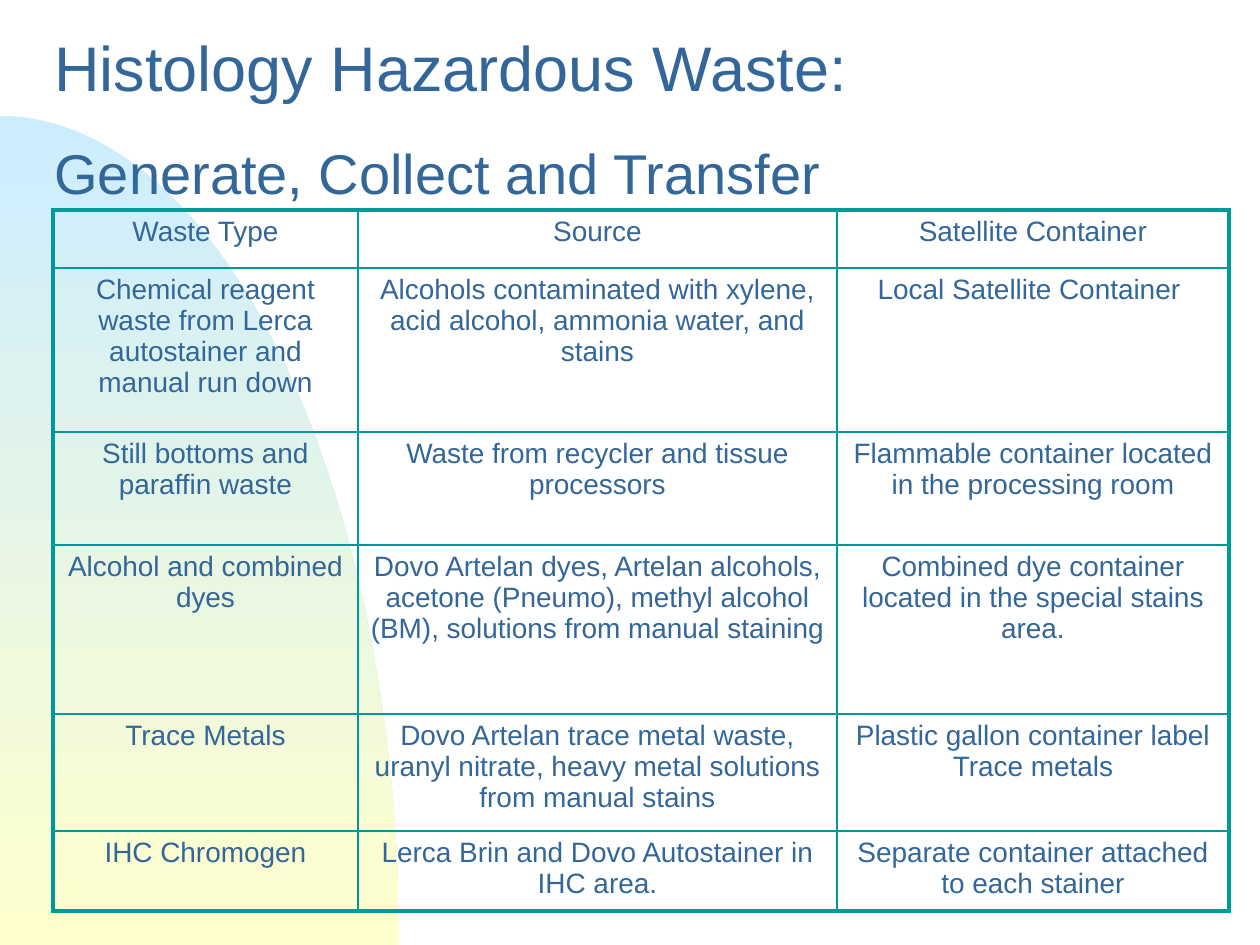
from dataclasses import dataclass
from math import cos, pi, sin

from lxml import etree
from pptx import Presentation
from pptx import util as u
from pptx.dml.color import RGBColor
from pptx.enum import text
from pptx.oxml.ns import qn

EMU_PER_PX = 914400 / 126
WIDTH, HEIGHT = 1260, 945
INK, RULE = "336699", "009999"
SKY, CREAM = "CCECFF", "FFFFCC"
OUTER, INNER = 2.25, 1
ARC_STEPS = 90


@dataclass
class Heading:
    words: str
    size: int
    space_before: float


@dataclass
class WasteRow:
    height: int
    cells: tuple[str, str, str]


HEADINGS = [
    Heading("Histology Hazardous Waste:", 36, 0),
    Heading("Generate, Collect and Transfer", 32, 31.5),
]
COLUMN_WIDTHS = [305, 479, 392]
WASTE_ROWS = [
    WasteRow(58, ("Waste Type", "Source", "Satellite Container")),
    WasteRow(164, (
        "Chemical reagent waste from Lerca autostainer and manual run down",
        "Alcohols contaminated with xylene, acid alcohol, ammonia water, and stains",
        "Local Satellite Container ")),
    WasteRow(113, (
        "Still bottoms and paraffin waste",
        "Waste from recycler and tissue processors",
        "Flammable container located in the processing room")),
    WasteRow(169, (
        "Alcohol and combined dyes",
        "Dovo Artelan dyes, Artelan alcohols, acetone (Pneumo), methyl alcohol "
        "(BM), solutions from manual staining",
        "Combined dye container located in the special stains area.")),
    WasteRow(117, (
        "Trace Metals",
        "Dovo Artelan trace metal waste, uranyl nitrate, heavy metal solutions "
        "from manual stains",
        "Plastic gallon container label Trace metals")),
    WasteRow(80, (
        "IHC Chromogen",
        "Lerca Brin and Dovo Autostainer in IHC area.",
        "Separate container attached to each stainer")),
]


def px(length: int) -> u.Emu:
    return u.Emu(round(length * EMU_PER_PX))


def color(code: str) -> RGBColor:
    return RGBColor.from_string(code)


def apply(target, values: dict) -> None:
    for name, value in values.items():
        setattr(target, name, value)


def write(paragraph, words: str, size: int) -> None:
    run = paragraph.add_run()
    run.text = words
    apply(run.font, {"name": "Arial", "size": u.Pt(size)})
    run.font.color.rgb = color(INK)


def draw_hill(slide, top: int, radius: int) -> None:
    rise = HEIGHT - top
    angles = [pi / 2 * step / ARC_STEPS for step in range(ARC_STEPS + 1)]
    arc = [(px(radius * sin(a)), px(HEIGHT - rise * cos(a))) for a in angles]
    outline = slide.shapes.build_freeform(*arc[0])
    outline.add_line_segments(arc[1:] + [(0, px(HEIGHT))], close=True)
    hill = outline.convert_to_shape()
    hill.shadow.inherit = False
    hill.line.fill.background()
    hill.fill.gradient()
    hill.fill.gradient_angle = 270
    for stop, code, position in zip(hill.fill.gradient_stops, (SKY, CREAM), (0, 1)):
        stop.color.rgb = color(code)
        stop.position = position


def draw_title(slide) -> None:
    frame = slide.shapes.add_textbox(px(42), px(53), px(1176), px(147)).text_frame
    apply(frame, {"word_wrap": True, "vertical_anchor": text.MSO_ANCHOR.MIDDLE})
    for index, heading in enumerate(HEADINGS):
        paragraph = frame.add_paragraph() if index else frame.paragraphs[0]
        apply(paragraph, {"line_spacing": 0.7, "space_before": u.Pt(heading.space_before)})
        write(paragraph, heading.words, heading.size)


def add_border(cell, side: str, points: float) -> None:
    properties = cell._tc.get_or_add_tcPr()
    line = etree.SubElement(properties, qn(f"a:ln{side}"), w=str(u.Pt(points)))
    fill = etree.SubElement(line, qn("a:solidFill"))
    etree.SubElement(fill, qn("a:srgbClr"), val=RULE)


def draw_waste_table(slide) -> None:
    last_row, last_column = len(WASTE_ROWS) - 1, len(COLUMN_WIDTHS) - 1
    table = slide.shapes.add_table(
        last_row + 1, last_column + 1, px(53), px(210),
        px(sum(COLUMN_WIDTHS)), px(sum(row.height for row in WASTE_ROWS))).table
    apply(table, {"first_row": False, "horz_banding": False})
    for column, width in zip(table.columns, COLUMN_WIDTHS):
        column.width = px(width)
    for r, waste in enumerate(WASTE_ROWS):
        table.rows[r].height = px(waste.height)
        for c, words in enumerate(waste.cells):
            cell = table.cell(r, c)
            edges = {"L": c == 0, "R": c == last_column, "T": r == 0, "B": r == last_row}
            for side, is_outer in edges.items():
                add_border(cell, side, OUTER if is_outer else INNER)
            cell.fill.background()
            paragraph = cell.text_frame.paragraphs[0]
            paragraph.alignment = text.PP_ALIGN.CENTER
            write(paragraph, words, 16)


def main() -> None:
    deck = Presentation()
    apply(deck, {"slide_width": px(WIDTH), "slide_height": px(HEIGHT)})
    slide = deck.slides.add_slide(deck.slide_layouts[6])
    draw_hill(slide, top=116, radius=399)
    draw_title(slide)
    draw_waste_table(slide)
    deck.save("out.pptx")


if __name__ == "__main__":
    main()
